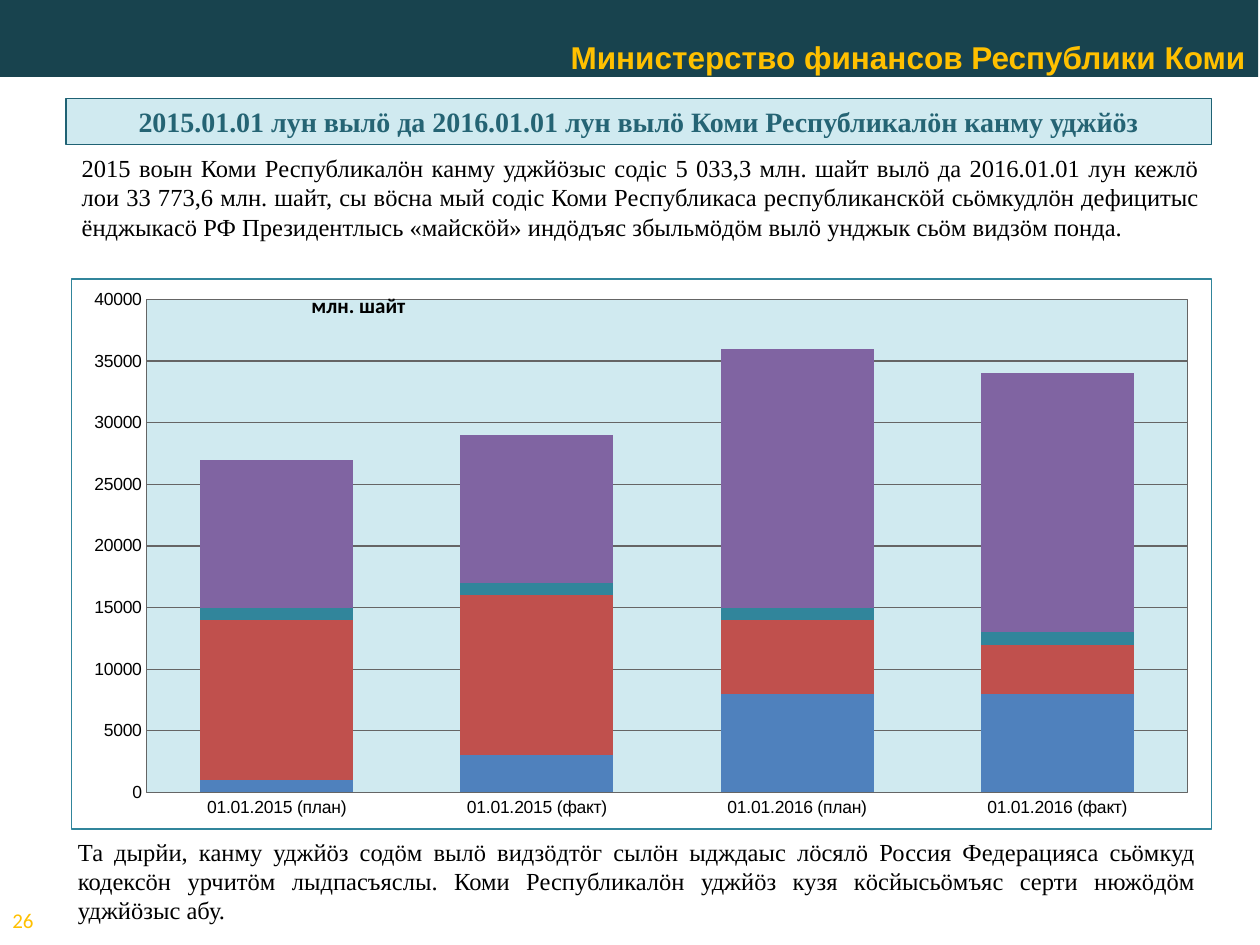
"""Build the slide on the state debt of the Komi Republic."""
from lxml import etree
from pptx import Presentation
from pptx import util as u
from pptx.chart import data as chart_data
from pptx.dml.color import RGBColor
from pptx.enum import chart as ch, shapes, text
from pptx.oxml import parse_xml

THEME = {
    "band": "18434E", "gold": "FFC000", "pale": "D0EAF0", "edge": "1F6274",
    "heading": "256474", "ink": "000000", "paper": "FFFFFF",
    "grid": "656565", "frame": "31859B",
    "series": ["4F81BD", "C0504D", "31859B", "8064A2"],
    "sans": "Arial", "serif": "Times New Roman", "small": "Calibri",
    "header_size": 18, "title_size": 16, "body_size": 14,
    "note_size": 12, "chart_size": 10,
}
ALIGN = text.PP_ALIGN
ANCHOR = text.MSO_ANCHOR


def color(name):
    return RGBColor.from_string(THEME.get(name, name))


def write(shape, words, font="serif", size="body_size", ink="ink", bold=False,
          align=ALIGN.JUSTIFY, anchor=ANCHOR.TOP, wrap=True, inset=(0.1, 0.05)):
    frame = shape.text_frame
    frame.auto_size = text.MSO_AUTO_SIZE.NONE
    frame.word_wrap = wrap
    frame.vertical_anchor = anchor
    frame.margin_left = frame.margin_right = u.Inches(inset[0])
    frame.margin_top = frame.margin_bottom = u.Inches(inset[1])
    para = frame.paragraphs[0]
    para.alignment = align
    span = para.add_run()
    span.text = words
    span.font.name = THEME[font]
    span.font.size = u.Pt(THEME[size])
    span.font.bold = bold
    span.font.color.rgb = color(ink)


deck = Presentation()
deck.slide_width, deck.slide_height = u.Inches(10), u.Inches(7.5)
column, row = deck.slide_width / 100, deck.slide_height / 75
page = deck.slides.add_slide(deck.slide_layouts[5])

areas = {
    "header": (0, -0.1, 99.85, 6.2),
    "title": (5.23, 7.8, 90.9, 3.65),
    "intro": (5.5, 11.65, 90.7, 10.3),
    "chart": (5.65, 22.1, 90.55, 43.75),
    "unit": (24.5, 22.7, 7.9, 3.1),
    "closing": (5.2, 65.9, 90.7, 8),
    "number": (0, 71, 4.3, 4),
}
places = {
    name: (int(x * column), int(y * row), int(w * column), int(h * row))
    for name, (x, y, w, h) in areas.items()
}

header = page.shapes.add_shape(shapes.MSO_SHAPE.RECTANGLE, *places["header"])
header.shadow.inherit = False
header.fill.solid()
header.fill.fore_color.rgb = color("band")
header.line.fill.background()
write(header, "Министерство финансов Республики Коми", font="sans", size="header_size",
      ink="gold", bold=True, align=ALIGN.RIGHT, anchor=ANCHOR.BOTTOM, inset=(0.1, 0.01))

title = page.shapes.title
title.left, title.top, title.width, title.height = places["title"]
title.fill.solid()
title.fill.fore_color.rgb = color("pale")
title.line.color.rgb = color("edge")
title.line.width = u.Pt(0.75)
write(title, "2015.01.01 лун вылӧ да 2016.01.01 лун вылӧ Коми Республикалӧн канму уджйӧз",
      size="title_size", ink="heading", bold=True, align=ALIGN.CENTER)

debt = chart_data.CategoryChartData()
debt.categories = ["01.01.2015 (план)", "01.01.2015 (факт)",
                   "01.01.2016 (план)", "01.01.2016 (факт)"]
layers = [
    (1000, 3000, 8000, 8000),
    (13000, 13000, 6000, 4000),
    (1000, 1000, 1000, 1000),
    (12000, 12000, 21000, 21000),
]
for number, values in enumerate(layers, 1):
    debt.add_series(f"Series {number}", values)
chart = page.shapes.add_chart(ch.XL_CHART_TYPE.COLUMN_STACKED, *places["chart"], debt).chart
chart.has_title = False
chart.has_legend = False
chart.font.name = THEME["sans"]
chart.font.size = u.Pt(THEME["chart_size"])
chart.font.color.rgb = color("ink")

plot = chart.plots[0]
plot.gap_width, plot.overlap = 70, 100
plot.vary_by_categories = False
for series, shade in zip(plot.series, THEME["series"]):
    series.format.fill.solid()
    series.format.fill.fore_color.rgb = color(shade)

scale = chart.value_axis
scale.minimum_scale, scale.maximum_scale, scale.major_unit = 0, 40000, 5000
scale.has_major_gridlines = True
scale.tick_labels.number_format = "0"
scale.tick_labels.number_format_is_linked = False
for axis in (chart.category_axis, scale):
    axis.major_tick_mark = axis.minor_tick_mark = ch.XL_TICK_MARK.NONE
for line in (chart.category_axis.format.line, scale.format.line,
             scale.major_gridlines.format.line):
    line.color.rgb = color("grid")
    line.width = u.Pt(0.75)

SPACES = ('xmlns:c="http://schemas.openxmlformats.org/drawingml/2006/chart" '
          'xmlns:a="http://schemas.openxmlformats.org/drawingml/2006/main"')
surface = """<c:spPr {}><a:solidFill><a:srgbClr val="{}"/></a:solidFill>
<a:ln w="9525"><a:solidFill><a:srgbClr val="{}"/></a:solidFill></a:ln></c:spPr>"""
plot_area = chart._chartSpace.chart.plotArea
plot_area.append(parse_xml(surface.format(SPACES, THEME["pale"], THEME["grid"])))
chart._chartSpace.chart.addnext(
    parse_xml(surface.format(SPACES, THEME["paper"], THEME["frame"])))

for old in plot_area.findall("{*}layout"):
    plot_area.remove(old)
layout = parse_xml(f"<c:layout {SPACES}><c:manualLayout/></c:layout>")
chart_columns, chart_rows = areas["chart"][2:]
settings = {"layoutTarget": "inner", "xMode": "edge", "yMode": "edge",
            "x": 5.95 / chart_columns, "y": 1.63 / chart_rows,
            "w": 82.7 / chart_columns, "h": 39.22 / chart_rows}
for name, value in settings.items():
    etree.SubElement(layout[0], f"{{{layout.nsmap['c']}}}{name}", val=str(value))
plot_area.insert(0, layout)

notes = [
    ("intro", "2015 воын Коми Республикалӧн канму уджйӧзыс содiс 5 033,3 млн. шайт вылӧ да "
     "2016.01.01 лун кежлӧ лои 33 773,6 млн. шайт, сы вӧсна мый содiс Коми Республикаса "
     "республиканскӧй сьӧмкудлӧн дефицитыс ёнджыкасӧ РФ Президентлысь «майскӧй» индӧдъяс "
     "збыльмӧдӧм вылӧ унджык сьӧм видзӧм понда.", {}),
    ("unit", "млн. шайт", dict(font="small", size="note_size", bold=True,
                               align=ALIGN.CENTER, wrap=False)),
    ("closing", "Та дырйи, канму уджйӧз содӧм вылӧ видзӧдтӧг сылӧн ыдждаыс лӧсялӧ Россия "
     "Федерацияса сьӧмкуд кодексӧн урчитӧм лыдпасъяслы. Коми Республикалӧн уджйӧз кузя "
     "кӧсйысьӧмъяс серти нюжӧдӧм уджйӧзыс абу.", {}),
    ("number", "26", dict(font="small", size="note_size", ink="gold",
                          align=ALIGN.LEFT, anchor=ANCHOR.MIDDLE)),
]
for name, words, style in notes:
    box = page.shapes.add_textbox(*places[name])
    write(box, words, **style)

deck.save("out.pptx")
